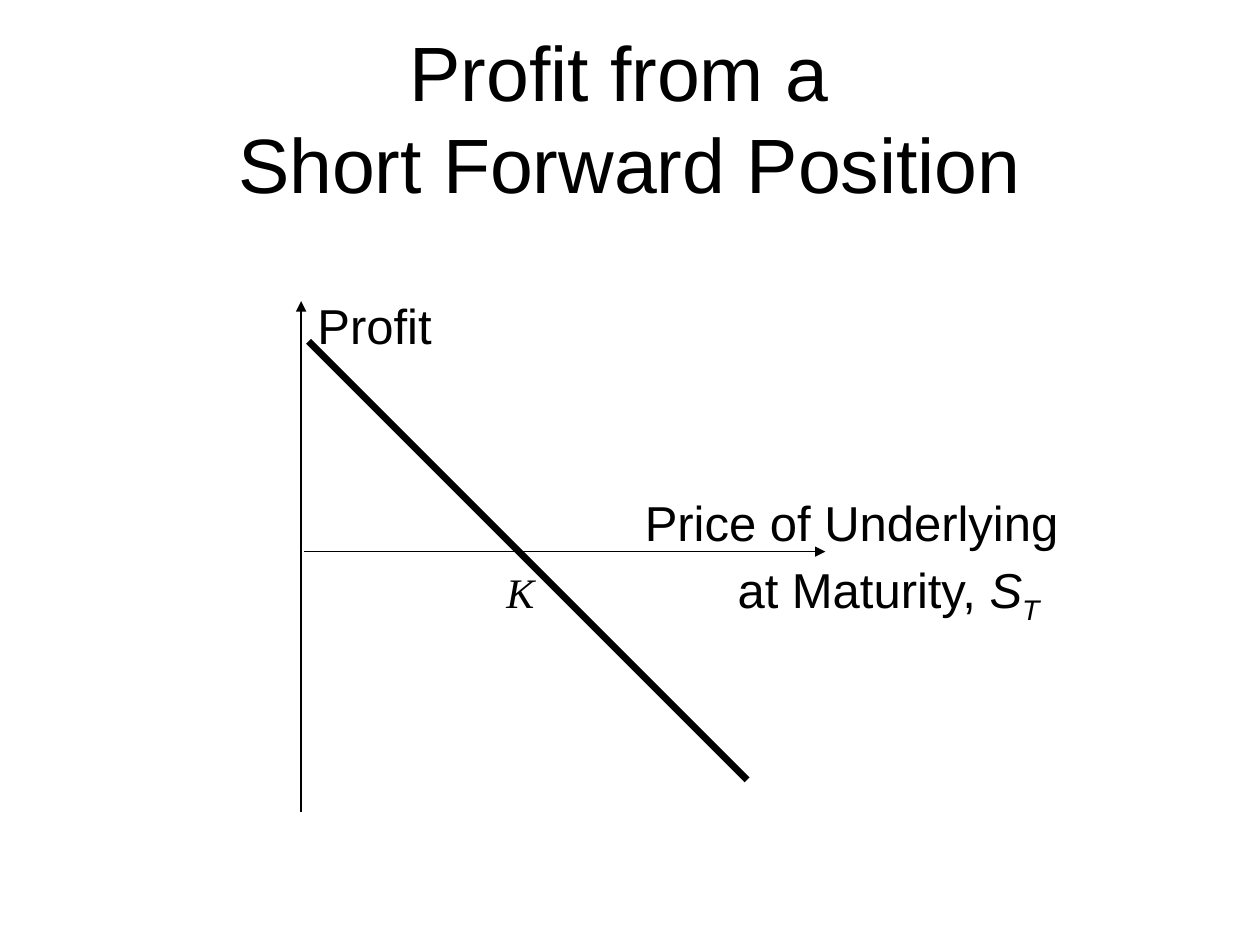
from lxml import etree
from pptx import Presentation
from pptx.dml.color import RGBColor
from pptx.enum.shapes import MSO_CONNECTOR
from pptx.enum.text import MSO_ANCHOR, MSO_AUTO_SIZE, PP_ALIGN
from pptx.oxml.ns import qn
from pptx.util import Cm, Pt

STRAIGHT = MSO_CONNECTOR.STRAIGHT
MIDDLE = MSO_ANCHOR.MIDDLE
CENTER = PP_ALIGN.CENTER
FIT_SHAPE = MSO_AUTO_SIZE.SHAPE_TO_FIT_TEXT

COLORS = {"ink": "000000", "background": "FFFFFF"}
TITLE_FONT = {"name": "Arial", "size": Pt(44)}
LABEL_FONT = {"name": "Arial", "size": Pt(28)}
STRIKE_FONT = {"name": "Times New Roman", "size": Pt(24), "italic": True}


def set_attributes(target, values):
    for name, value in values.items():
        setattr(target, name, value)


def add_text_box(shapes, box, **frame_format):
    """Add an empty text box at box (left, top, width, height in cm); return its frame."""
    frame = shapes.add_textbox(*map(Cm, box)).text_frame
    set_attributes(frame, frame_format)
    return frame


def add_run(paragraph, text, font_format):
    run = paragraph.add_run()
    run.text = text
    set_attributes(run.font, font_format)
    run.font.color.rgb = RGBColor.from_string(COLORS["ink"])
    return run


def add_line(shapes, start, end, width, arrow=False):
    """Draw a line between two points in cm, with an optional arrowhead at its end."""
    line = shapes.add_connector(STRAIGHT, *map(Cm, (*start, *end)))
    line.line.width = Pt(width)
    line.line.color.rgb = RGBColor.from_string(COLORS["ink"])
    if arrow:
        etree.SubElement(line.line._get_or_add_ln(), qn("a:tailEnd"), type="triangle")
    etree.SubElement(line._element.spPr, qn("a:effectLst"))


def add_title(slide, box):
    frame = add_text_box(slide.shapes, box, word_wrap=True, vertical_anchor=MIDDLE)
    paragraph = frame.paragraphs[0]
    paragraph.alignment = CENTER
    add_run(paragraph, "Profit from a ", TITLE_FONT)
    paragraph.add_line_break()
    add_run(paragraph, "Short Forward Position", TITLE_FONT)


def add_payoff_diagram(slide, box):
    """Draw the axes, the payoff line and their labels; box spans both axes."""
    left, top, width, height = box
    shapes = slide.shapes.add_group_shape().shapes
    zero_profit = top + 5.05
    payoff_left, payoff_top, payoff_span = left + 0.15, top + 0.81, 8.84

    add_line(shapes, (left, top + height), (left, top), 1, arrow=True)
    add_line(shapes, (left + 0.05, zero_profit), (left + width, zero_profit), 1, arrow=True)

    label_format = {"word_wrap": False, "auto_size": FIT_SHAPE}
    profit = add_text_box(shapes, (left + 0.08, top - 0.23, 2.82, 1.42), **label_format)
    add_run(profit.paragraphs[0], "Profit", LABEL_FONT)

    price = add_text_box(shapes, (left + 6.68, top + 3.73, 8.86, 2.79), **label_format)
    add_run(price.paragraphs[0], "Price of Underlying", LABEL_FONT)
    maturity = price.add_paragraph()
    maturity.space_before = Pt(4.5)
    maturity._p.get_or_add_pPr().set("marL", str(Cm(1.87)))
    add_run(maturity, "at Maturity, ", LABEL_FONT)
    add_run(maturity, "S", {**LABEL_FONT, "italic": True})
    subscript = add_run(maturity, "T", {**LABEL_FONT, "italic": True})
    subscript._r.get_or_add_rPr().set("baseline", "-25000")

    add_line(shapes, (payoff_left, payoff_top),
             (payoff_left + payoff_span, payoff_top + payoff_span), 4)

    strike = add_text_box(slide.shapes, (left + 3.89, top + 5.22, 1.04, 1.27),
                          word_wrap=True, auto_size=FIT_SHAPE)
    add_run(strike.paragraphs[0], "K", STRIKE_FONT)


def main():
    presentation = Presentation()
    presentation.slide_width, presentation.slide_height = Cm(25.4), Cm(19.05)
    slide = presentation.slides.add_slide(presentation.slide_layouts[6])
    slide.background.fill.solid()
    slide.background.fill.fore_color.rgb = RGBColor.from_string(COLORS["background"])
    add_title(slide, (1.27, 0.76, 22.86, 3.18))
    add_payoff_diagram(slide, (6.07, 6.07, 10.57, 10.29))
    presentation.save("out.pptx")


if __name__ == "__main__":
    main()
